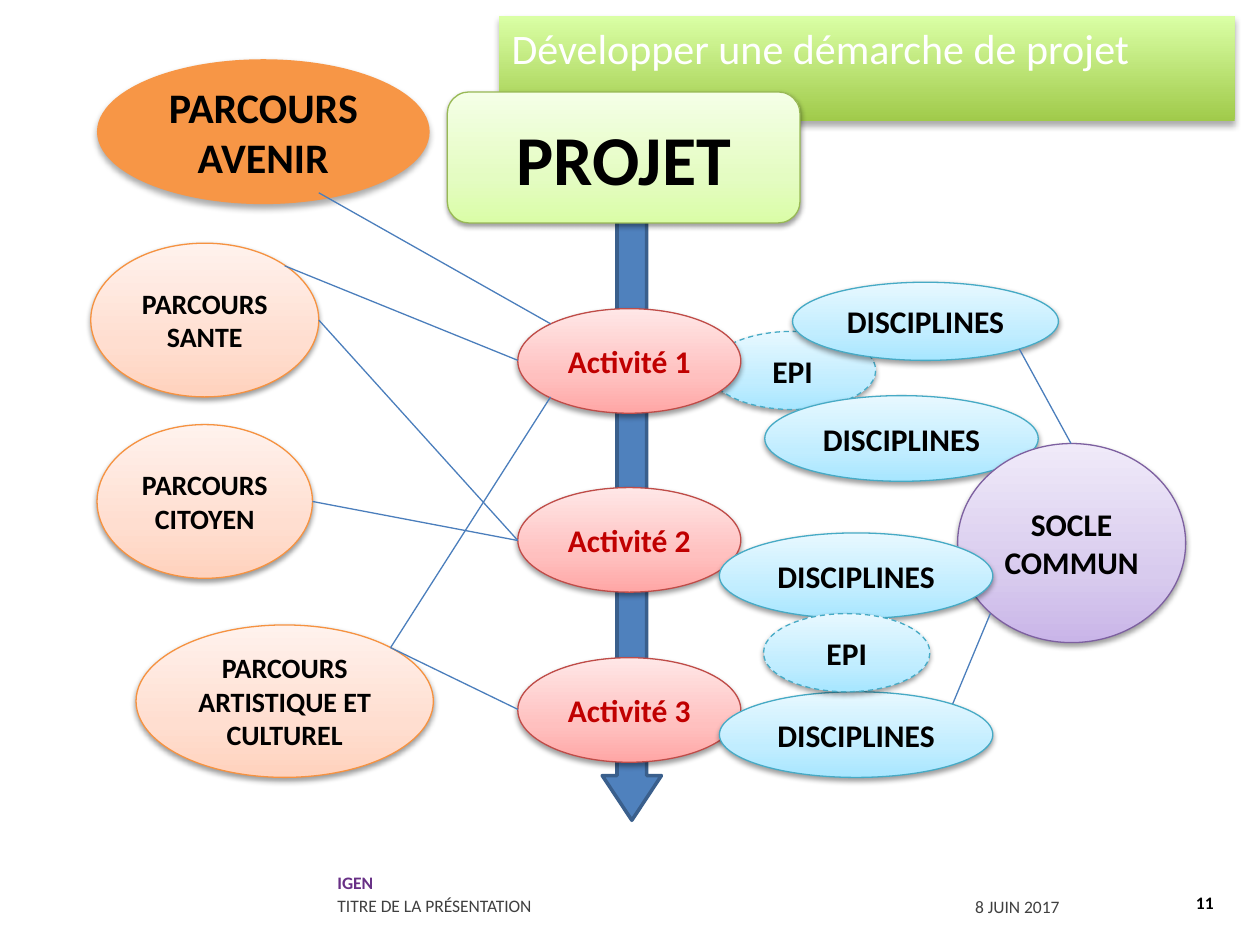
from lxml import etree
from pptx import Presentation
from pptx.dml.color import RGBColor
from pptx.enum.dml import MSO_LINE
from pptx.enum.shapes import MSO_CONNECTOR, MSO_SHAPE
from pptx.enum.text import MSO_ANCHOR, MSO_AUTO_SIZE, PP_ALIGN
from pptx.oxml.ns import qn
from pptx.util import Inches, Pt

ELLIPSE = MSO_SHAPE.OVAL
ROUNDED = MSO_SHAPE.ROUNDED_RECTANGLE
DOWN_ARROW = MSO_SHAPE.DOWN_ARROW
STRAIGHT = MSO_CONNECTOR.STRAIGHT
DASH = MSO_LINE.DASH
MIDDLE = MSO_ANCHOR.MIDDLE
TOP = MSO_ANCHOR.TOP
GROW = MSO_AUTO_SIZE.SHAPE_TO_FIT_TEXT
LEFT, CENTER, RIGHT = PP_ALIGN.LEFT, PP_ALIGN.CENTER, PP_ALIGN.RIGHT

FONT = "Calibri"
COLORS = {
    "black": "000000", "white": "FFFFFF", "grey": "404040",
    "footer": "683086", "activity_text": "C00000",
    "arrow": "4F81BD", "arrow_line": "3A5F8C", "link": "4B7EBC",
    "avenir": "F79646", "parcours": "F69240", "projet": "98B955",
    "activity": "BF4C48", "discipline": "46AAC5", "socle": "7D60A0",
}
GRADIENTS = {
    "title": [(0, "A0CA4A"), (100, "DAFFA5")],
    "parcours": [(0, "FFD2BD"), (35, "FFDED0"), (100, "FFF2ED")],
    "projet": [(0, "DAFDA7"), (35, "E4FCC2"), (100, "F5FFE7")],
    "activity": [(0, "FFA6A5"), (35, "FFC0BF"), (100, "FFE7E7")],
    "discipline": [(0, "A7E6FF"), (35, "C1EDFF"), (100, "E7F8FF")],
    "socle": [(0, "C9B5E8"), (35, "D8CBEE"), (100, "F0EAF9")],
}
SOFT_SHADOW = (38, 3.1, 1.6)
STRONG_SHADOW = (32, 3.5, 2.2)

PARCOURS = [
    ((1.08, 4.96, 2.36, 1.21), ["PARCOURS ARTISTIQUE ET", "CULTUREL"]),
    ((0.77, 3.37, 1.71, 1.22), ["PARCOURS", "CITOYEN"]),
    ((0.72, 1.93, 1.81, 1.22), ["PARCOURS", "SANTE"]),
]
ACTIVITY_TOPS = [2.45, 3.87, 5.22]
LINKS = [
    ((4.11, 4.29), (2.53, 2.54)),
    ((4.11, 4.29), (2.48, 3.98)),
    ((4.37, 3.15), (3.1, 5.14)),
    ((4.11, 5.63), (3.1, 5.14)),
    ((7.86, 4.87), (7.56, 5.59)),
    ((4.11, 2.86), (2.26, 2.11)),
    ((8.09, 2.77), (8.5, 3.52)),
    ((4.37, 2.57), (2.53, 1.53)),
]


def rgb(name):
    return RGBColor.from_string(COLORS[name])


def inches(box):
    return [Inches(value) for value in box]


def add_color(parent, value):
    color = etree.SubElement(parent, qn("a:srgbClr"))
    color.set("val", value)
    return color


def fill_gradient(shape, name):
    shape.fill.gradient()
    shape.fill.gradient_angle = 90
    stops = shape._element.spPr.find(qn("a:gradFill")).find(qn("a:gsLst"))
    for stop in list(stops):
        stops.remove(stop)
    for position, value in GRADIENTS[name]:
        stop = etree.SubElement(stops, qn("a:gs"))
        stop.set("pos", str(position * 1000))
        add_color(stop, value)


def add_shadow(shape, opacity, blur, distance):
    shape.shadow.inherit = False
    effects = shape._element.spPr.find(qn("a:effectLst"))
    shadow = etree.SubElement(effects, qn("a:outerShdw"))
    settings = {"blurRad": Pt(blur), "dist": Pt(distance), "dir": 5400000, "rotWithShape": 0}
    for key, value in settings.items():
        shadow.set(key, str(int(value)))
    alpha = etree.SubElement(add_color(shadow, COLORS["black"]), qn("a:alpha"))
    alpha.set("val", str(opacity * 1000))


def write(shape, lines, size, colors, bolds, align=CENTER, anchor=MIDDLE, spacing=None):
    frame = shape.text_frame
    frame.word_wrap = True
    frame.vertical_anchor = anchor
    frame.text = "\n".join(lines)
    for paragraph, color, bold in zip(frame.paragraphs, colors, bolds):
        paragraph.alignment = align
        if spacing:
            paragraph.line_spacing = Pt(spacing)
        font = paragraph.font
        font.name, font.size, font.bold = FONT, Pt(size), bold
        font.color.rgb = rgb(color)


def add_node(slide, box, lines, style, size=18, color="black", kind=ELLIPSE, dashed=False):
    shape = slide.shapes.add_shape(kind, *inches(box))
    if style in GRADIENTS:
        fill_gradient(shape, style)
        shape.line.color.rgb = rgb(style)
        shape.line.width = Pt(0.75)
        add_shadow(shape, *SOFT_SHADOW)
    else:
        shape.fill.solid()
        shape.fill.fore_color.rgb = rgb(style)
        shape.line.fill.background()
        add_shadow(shape, *STRONG_SHADOW)
    if dashed:
        shape.line.dash_style = DASH
    write(shape, lines, size, [color] * len(lines), [True] * len(lines))


def add_discipline(slide, box):
    add_node(slide, box, ["DISCIPLINES"], "discipline")


def add_epi(slide, left, top):
    add_node(slide, (left, top, 1.32, 0.62), ["EPI"], "discipline", dashed=True)


def add_link(slide, start, end):
    link = slide.shapes.add_connector(STRAIGHT, *inches(start + end))
    link.line.color.rgb = rgb("link")
    link.line.width = Pt(0.75)
    etree.SubElement(link._element.spPr, qn("a:effectLst"))


def add_arrow(slide):
    arrow = slide.shapes.add_shape(DOWN_ARROW, *inches((4.78, 1.72, 0.47, 4.79)))
    arrow.adjustments[0] = 0.5
    arrow.adjustments[1] = 0.755
    arrow.fill.solid()
    arrow.fill.fore_color.rgb = rgb("arrow")
    arrow.line.color.rgb = rgb("arrow_line")
    arrow.line.width = Pt(2)
    arrow.shadow.inherit = False


def add_title(slide):
    title = slide.shapes.title
    title.left, title.top, title.width, title.height = inches((3.96, 0.13, 5.84, 0.5))
    fill_gradient(title, "title")
    add_shadow(title, *STRONG_SHADOW)
    write(title, ["Développer une démarche de projet"], 24, ["white"], [False], LEFT, TOP)
    title.text_frame.auto_size = GROW


def add_label(slide, box, lines, colors, bolds, align=LEFT, spacing=None):
    label = slide.shapes.add_textbox(*inches(box))
    write(label, lines, 10, colors, bolds, align, spacing=spacing)


def add_footer(slide):
    add_label(slide, (8.91, 6.99, 0.82, 0.34), ["11"], ["black"], [True], RIGHT)
    add_label(slide, (7.64, 6.99, 1.27, 0.4), ["8 JUIN 2017"], ["grey"], [False], spacing=13.2)
    add_label(slide, (2.58, 6.72, 3.41, 0.74), ["IGEN", "TITRE DE LA PRÉSENTATION"],
              ["footer", "grey"], [True, False], spacing=13.2)


def main():
    presentation = Presentation()
    presentation.slide_width = Inches(10)
    presentation.slide_height = Inches(7.5)
    slide = presentation.slides.add_slide(presentation.slide_layouts[5])
    add_title(slide)
    add_footer(slide)
    add_arrow(slide)
    add_epi(slide, 5.63, 2.63)
    add_node(slide, (0.77, 0.47, 2.64, 1.15), ["PARCOURS", "AVENIR"], "avenir", 24)
    for box, lines in PARCOURS:
        add_node(slide, box, lines, "parcours", 16)
    add_node(slide, (3.55, 0.73, 2.8, 1.04), ["PROJET"], "projet", 40, kind=ROUNDED)
    for number, top in enumerate(ACTIVITY_TOPS, 1):
        add_node(slide, (4.11, top, 1.77, 0.83), [f"Activité {number}"],
                 "activity", color="activity_text")
    add_discipline(slide, (6.07, 3.14, 2.17, 0.68))
    add_discipline(slide, (6.29, 2.24, 2.11, 0.62))
    add_node(slide, (7.6, 3.52, 1.81, 1.58), ["SOCLE", "COMMUN"], "socle")
    add_discipline(slide, (5.71, 4.23, 2.17, 0.68))
    for start, end in LINKS:
        add_link(slide, start, end)
    add_discipline(slide, (5.71, 5.49, 2.17, 0.68))
    add_epi(slide, 6.06, 4.87)
    presentation.save("out.pptx")


if __name__ == "__main__":
    main()
